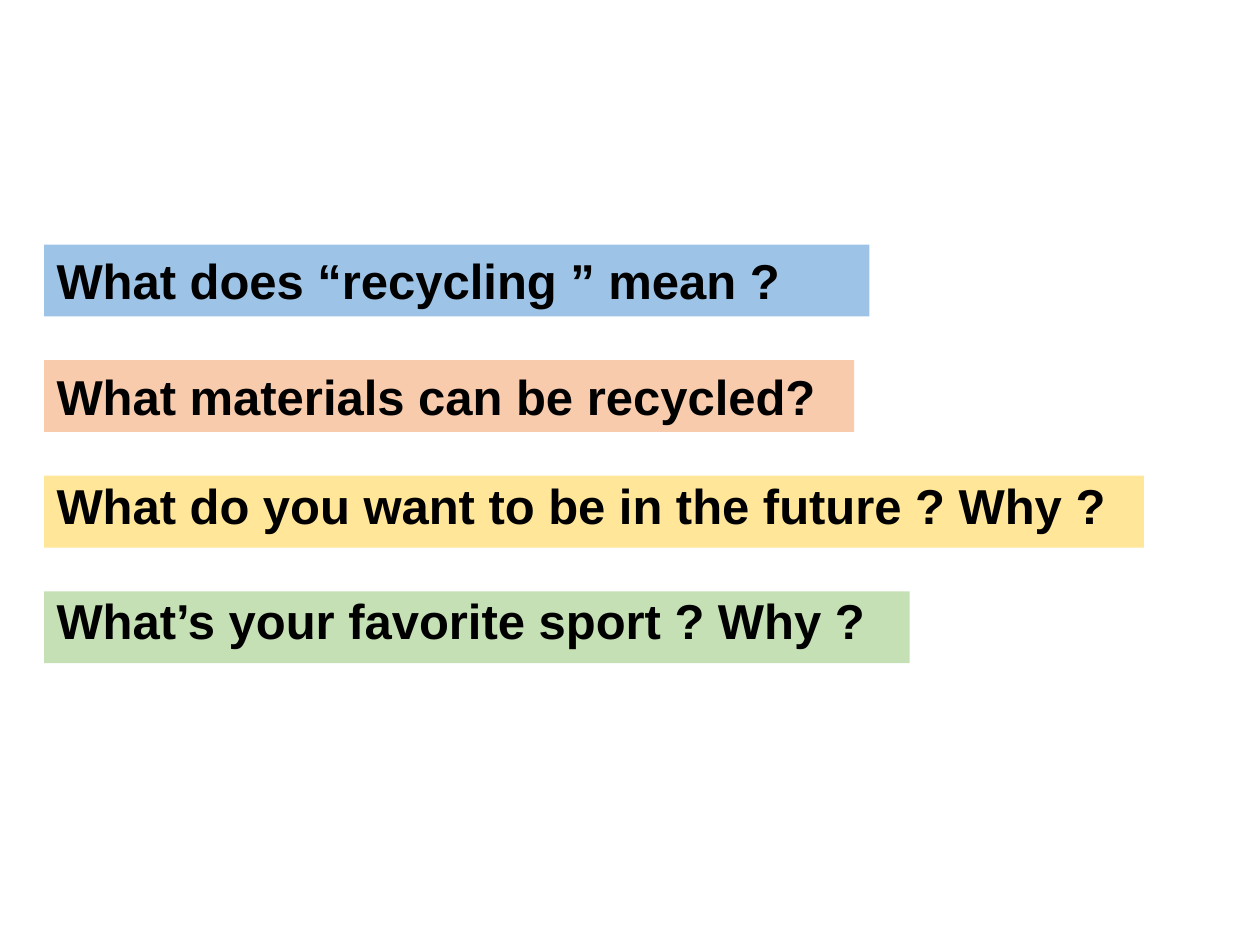
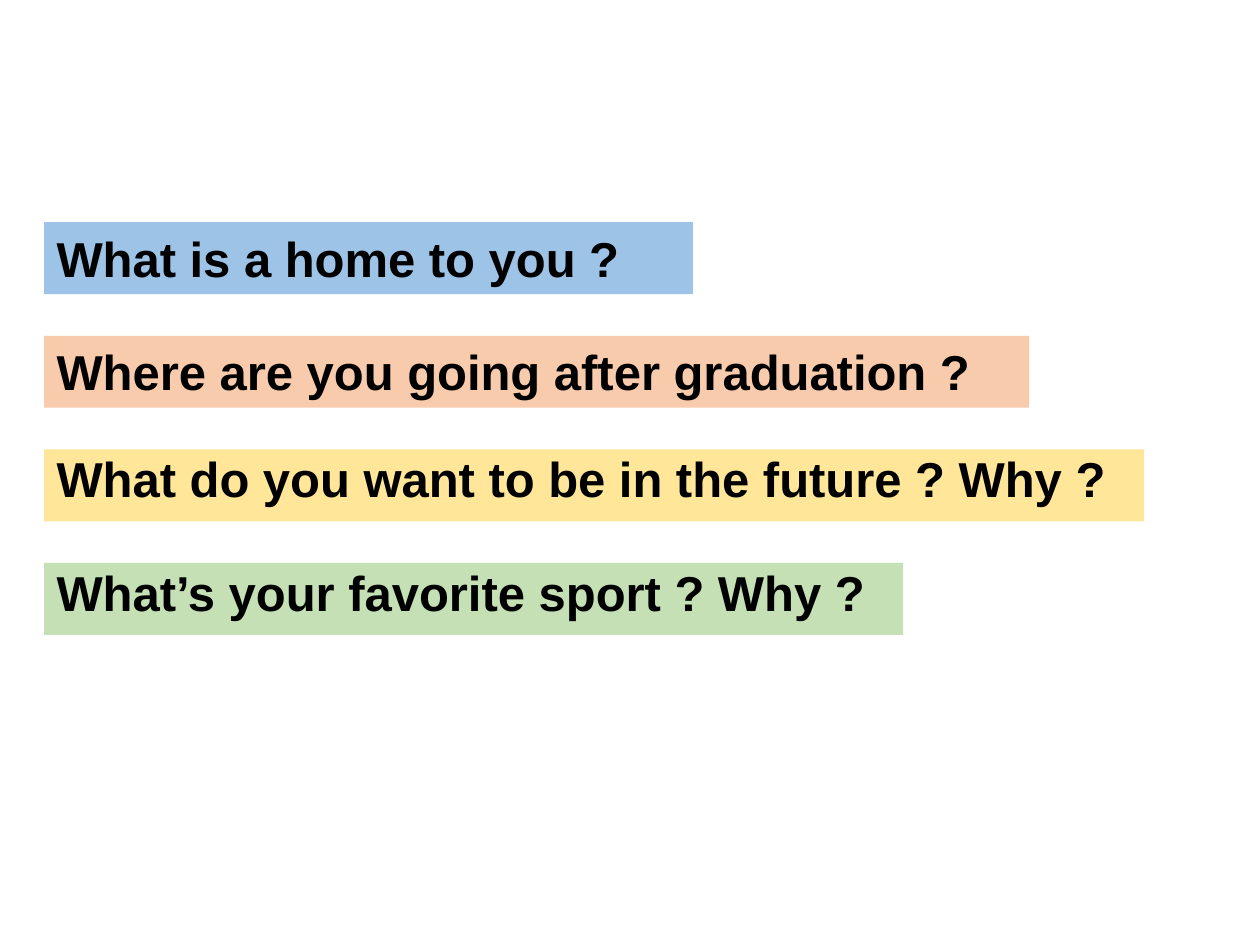
from dataclasses import dataclass

from pptx import Presentation
from pptx.dml.color import RGBColor
from pptx.enum.text import MSO_ANCHOR
from pptx.util import Cm, Pt

TOP = MSO_ANCHOR.TOP
BLANK_LAYOUT = 6


@dataclass(frozen=True)
class Theme:
    font: str = "Arial"
    size: int = 28
    ink: str = "000000"
    # One (fill, line spacing) pair for each band, from top to bottom
    bands: tuple = (
        ("9DC3E6", 1.0),
        ("F8CBAD", 1.0),
        ("FFE699", 0.9),
        ("C5E0B4", 0.9),
    )


THEME = Theme()
SLIDE_WIDTH, SLIDE_HEIGHT = 25.4, 19.05
BAND_LEFT, BAND_HEIGHT = 0.89, 1.45

FUTURE_QUESTION = "What do you want to be in the future ? Why ?"
SPORT_QUESTION = "What’s your favorite sport ? Why ?"

# Top of the first band, distance between bands, and (question, band width)
QUESTION_SETS = (
    (4.93, 2.33, (
        ("What does “recycling ” mean ?", 16.64),
        ("What materials can be recycled?", 16.33),
        (FUTURE_QUESTION, 22.17),
        (SPORT_QUESTION, 17.45),
    )),
    (4.48, 2.29, (
        ("What is a home to you ?", 13.08),
        ("Where are you going after graduation ?", 19.86),
        (FUTURE_QUESTION, 22.17),
        (SPORT_QUESTION, 17.32),
    )),
)


def add_question_band(slide, left, top, width, question, fill, line_spacing):
    band = slide.shapes.add_textbox(Cm(left), Cm(top), Cm(width), Cm(BAND_HEIGHT))
    band.fill.solid()
    band.fill.fore_color.rgb = RGBColor.from_string(fill)
    frame = band.text_frame
    frame.word_wrap = True
    frame.vertical_anchor = TOP
    paragraph = frame.paragraphs[0]
    paragraph.line_spacing = line_spacing
    run = paragraph.add_run()
    run.text = question
    font_format = {"name": THEME.font, "size": Pt(THEME.size), "bold": True}
    for attribute, value in font_format.items():
        setattr(run.font, attribute, value)
    run.font.color.rgb = RGBColor.from_string(THEME.ink)


def add_question_slide(presentation, first_top, pitch, questions):
    slide = presentation.slides.add_slide(presentation.slide_layouts[BLANK_LAYOUT])
    for row, ((question, width), (fill, spacing)) in enumerate(zip(questions, THEME.bands)):
        add_question_band(slide, BAND_LEFT, first_top + row * pitch, width,
                          question, fill, spacing)


def main():
    presentation = Presentation()
    presentation.slide_width = Cm(SLIDE_WIDTH)
    presentation.slide_height = Cm(SLIDE_HEIGHT)
    for first_top, pitch, questions in QUESTION_SETS:
        add_question_slide(presentation, first_top, pitch, questions)
    presentation.save("out.pptx")


if __name__ == "__main__":
    main()
